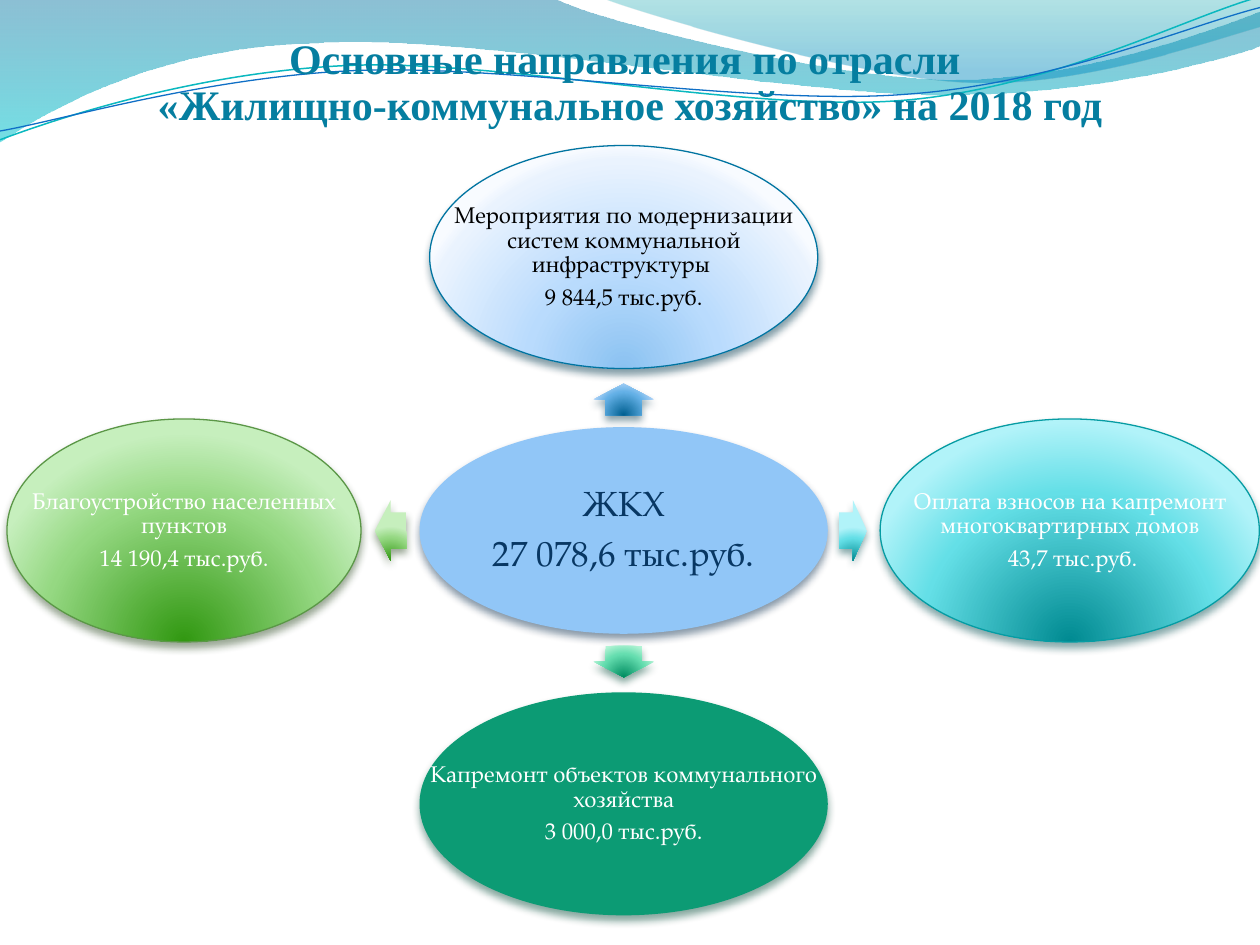
from lxml import etree
from pptx import Presentation
from pptx import util as u
from pptx.dml.color import RGBColor
from pptx.enum import shapes, text
from pptx.oxml.ns import nsdecls, qn

WIDE, HIGH = 10, 7.5
BODY, HEAD = "TeX Gyre Pagella", "Times New Roman"
HEX = {"title": "057EA0", "hub": "91C6F7", "ink": "083763", "dark": "000000",
       "light": "FFFFFF", "teal": "0AB8BF", "blue": "0F6FC6", "jade": "0C9B74"}
TITLE = ["Основные направления по отрасли ",
         "«Жилищно-коммунальное хозяйство» на 2018 год"]

# Waves: start point, then straight (2 numbers) or curved (6 numbers) steps.
BANDS = [
    ((0, 0), [(4.4, -.01), (4.76, .17, 6.64, .63, 7.58, .63),
              (8.53, .63, 9.58, .26, 10, .09), (10.01, .36),
              (9.83, .44, 8.7, .76, 7.46, .75), (6.22, .75, 3.82, .28, 2.57, .34),
              (1.29, .36, .46, .83, -.01, 1.13), (0, 0)],
     [(0, "0074A1", 45), (100, "00C6CF", 55)]),
    ((4.79, -.01), [(5.09, .11, 6.82, .62, 7.69, .65),
                    (8.56, .69, 9.61, .32, 10, .21), (10, 0), (4.79, -.01)],
     [(0, "00A1A9", 30), (80, "008BBF", 45)]),
]
LINES = [
    ((0, 1.11), [(.48, .93, 1.58, .57, 2.77, .52), (3.95, .47, 5.93, .89, 7.13, .8),
                 (8.33, .71, 9.38, .15, 9.98, -.02)], "teal", .85),
    ((0, 1.04), [(.47, .96, 1.64, .61, 2.83, .56), (4.03, .51, 5.97, .84, 7.17, .75),
                 (8.36, .67, 9.41, .21, 10, .06)], "blue", .75),
]

BLUES = [(0, "8BC2F1"), (43, "B9DBFD"), (93, "EAF3FE"), (100, "F8FBFF")]
SKIES = [(0, "006091"), (68, "64B1E7"), (100, "B1D6F9")]
TEALS = [(0, "008A91"), (68, "64DFE7"), (100, "B1F3F9")]
JADES = [(0, "008C60"), (68, "65DEB0"), (100, "B2F4D6")]
GREENS = [(0, "319811"), (68, "95D882"), (100, "C6EFBD")]

# Centre and size of each oval
MID_X, MID_Y, TALL = 4.95, 4.21, 1.77
HUB = dict(at=(MID_X, MID_Y, 3.24, 1.64), fill=HEX["hub"], edge=None, shade="042747",
           ink="ink", size=20, words=["ЖКХ", "27 078,6 тыс.руб."])
SPOKES = [
    dict(at=(MID_X, 2.04, 3.08, TALL), fill=BLUES, edge="0074A1", shade="00374C",
         ink="dark", arrow=(MID_X, 3.17, .25, 270, SKIES),
         words=["Мероприятия по модернизации систем коммунальной инфраструктуры ",
                "9 844,5 тыс.руб."]),
    dict(at=(8.49, MID_Y, 3.01, TALL), fill=TEALS, edge="069CA3", shade="024B4E",
         ink="light", arrow=(6.77, MID_Y, .22, 0, TEALS),
         words=["Оплата взносов на капремонт многоквартирных домов",
                " 43,7 тыс.руб."]),
    dict(at=(MID_X, 6.38, 3.24, TALL), fill=HEX["jade"], edge=None, shade="044A37",
         ink="light", arrow=(MID_X, 5.25, .25, 90, JADES),
         words=["Капремонт объектов коммунального хозяйства",
                "3 000,0 тыс.руб."]),
    dict(at=(1.46, MID_Y, 2.81, TALL), fill=GREENS, edge="5B9747", shade="2B4821",
         ink="light", arrow=(3.1, MID_Y, .25, 180, GREENS),
         words=["Благоустройство населенных пунктов", "14 190,4 тыс.руб."]),
]

LINEAR = '<a:lin ang="5400000" scaled="0"/>'
GLOW = ('<a:path path="circle"><a:fillToRect l="50000" t="130000" '
        'r="50000" b="-30000"/></a:path>')


def apply(thing, **values):
    for name, value in values.items():
        setattr(thing, name, value)


def paint(shape, fill, course=GLOW):
    """Fill with one hex colour or with a list of (place, colour, opacity) stops."""
    if isinstance(fill, str):
        shape.fill.solid()
        shape.fill.fore_color.rgb = RGBColor.from_string(fill)
        return
    stops = "".join(
        f'<a:gs pos="{place * 1000}"><a:srgbClr val="{color}">'
        f'<a:alpha val="{(rest or [100])[0] * 1000}"/></a:srgbClr></a:gs>'
        for place, color, *rest in fill)
    grad = etree.fromstring(f'<a:gradFill {nsdecls("a")} rotWithShape="1">'
                            f'<a:gsLst>{stops}</a:gsLst>{course}</a:gradFill>')
    shape.fill.background()
    blank = shape.element.spPr.find(qn("a:noFill"))
    blank.getparent().replace(blank, grad)


def rule(shape, color, width=.75):
    if color is None:
        shape.line.fill.background()
    else:
        shape.line.color.rgb = RGBColor.from_string(color)
        shape.line.width = u.Pt(width)


def shade(shape, color):
    shape.shadow.inherit = False
    shape.element.spPr.find(qn("a:effectLst")).append(etree.fromstring(
        f'<a:outerShdw {nsdecls("a")} blurRad="{u.Pt(4.5)}" dist="{u.Pt(3)}" '
        f'dir="5400000" rotWithShape="0"><a:srgbClr val="{color}">'
        f'<a:alpha val="48000"/></a:srgbClr></a:outerShdw>'))


def wave(slide, start, steps, close):
    """Draw all points as straight segments, then join threes into Bezier curves."""
    dots = [(round(u.Inches(x)), round(u.Inches(y)))
            for x, y in [start] + [step[n:n + 2] for step in steps
                                   for n in range(0, len(step), 2)]]
    pen = slide.shapes.build_freeform(*dots[0])
    pen.add_line_segments(dots[1:], close=close)
    shape = pen.convert_to_shape()
    shape.shadow.inherit = False
    parts = iter(list(shape.element.spPr.iter(qn("a:lnTo"))))
    for step in steps:
        curve = next(parts)
        if len(step) == 6:
            curve.tag = qn("a:cubicBezTo")
            for part in (next(parts), next(parts)):
                curve.append(part[0])
                part.getparent().remove(part)
    return shape


def write(frame, words, font, size, color, inset, after=0, bold=False):
    apply(frame, word_wrap=True, vertical_anchor=text.MSO_ANCHOR.MIDDLE,
          auto_size=text.MSO_AUTO_SIZE.NONE,
          **{f"margin_{side}": u.Inches(inset)
             for side in ("left", "top", "right", "bottom")})
    for n, line in enumerate(words):
        para = frame.add_paragraph() if n else frame.paragraphs[0]
        apply(para, alignment=text.PP_ALIGN.CENTER, line_spacing=.9,
              space_before=u.Pt(0), space_after=u.Pt(after))
        run = para.add_run()
        run.text = line
        apply(run.font, name=font, size=u.Pt(size), bold=bold)
        run.font.color.rgb = RGBColor.from_string(HEX[color])


def frame(x, y, wide, high):
    return [u.Inches(v) for v in (x - wide / 2, y - high / 2, wide, high)]


def oval(slide, at, fill, edge, shade_hex, words, ink, size=13):
    box = frame(*at)
    shape = slide.shapes.add_shape(shapes.MSO_SHAPE.OVAL, *box)
    paint(shape, fill)
    rule(shape, edge)
    shade(shape, shade_hex)
    label = slide.shapes.add_textbox(*box)
    write(label.text_frame, words, BODY, size, ink, .02, after=size * .35)


def arrow(slide, x, y, long, turn, fill, shade_hex):
    shape = slide.shapes.add_shape(shapes.MSO_SHAPE.RIGHT_ARROW, *frame(x, y, long, .48))
    shape.adjustments[0], shape.adjustments[1] = .6, .5
    shape.rotation = turn
    paint(shape, fill)
    rule(shape, None)
    shade(shape, shade_hex)


def main():
    deck = Presentation()
    apply(deck, slide_width=u.Inches(WIDE), slide_height=u.Inches(HIGH))
    slide = deck.slides.add_slide(deck.slide_layouts[5])
    for start, steps, fill in BANDS:
        band = wave(slide, start, steps, True)
        paint(band, fill, LINEAR)
        rule(band, None)
    for start, steps, color, width in LINES:
        line = wave(slide, start, steps, False)
        line.fill.background()
        rule(line, HEX[color], width)

    title = slide.shapes.title
    title.element.getparent().append(title.element)  # in front of the waves
    for name, value in zip(("left", "top", "width", "height"), (0, .24, WIDE, .85)):
        setattr(title, name, u.Inches(value))
    write(title.text_frame, TITLE, HEAD, 24, "title", .05, bold=True)

    oval(slide, HUB["at"], HUB["fill"], HUB["edge"], HUB["shade"],
         HUB["words"], HUB["ink"], HUB["size"])
    for spoke in SPOKES:
        arrow(slide, *spoke["arrow"], spoke["shade"])
        oval(slide, spoke["at"], spoke["fill"], spoke["edge"], spoke["shade"],
             spoke["words"], spoke["ink"])
    deck.save("out.pptx")


if __name__ == "__main__":
    main()
